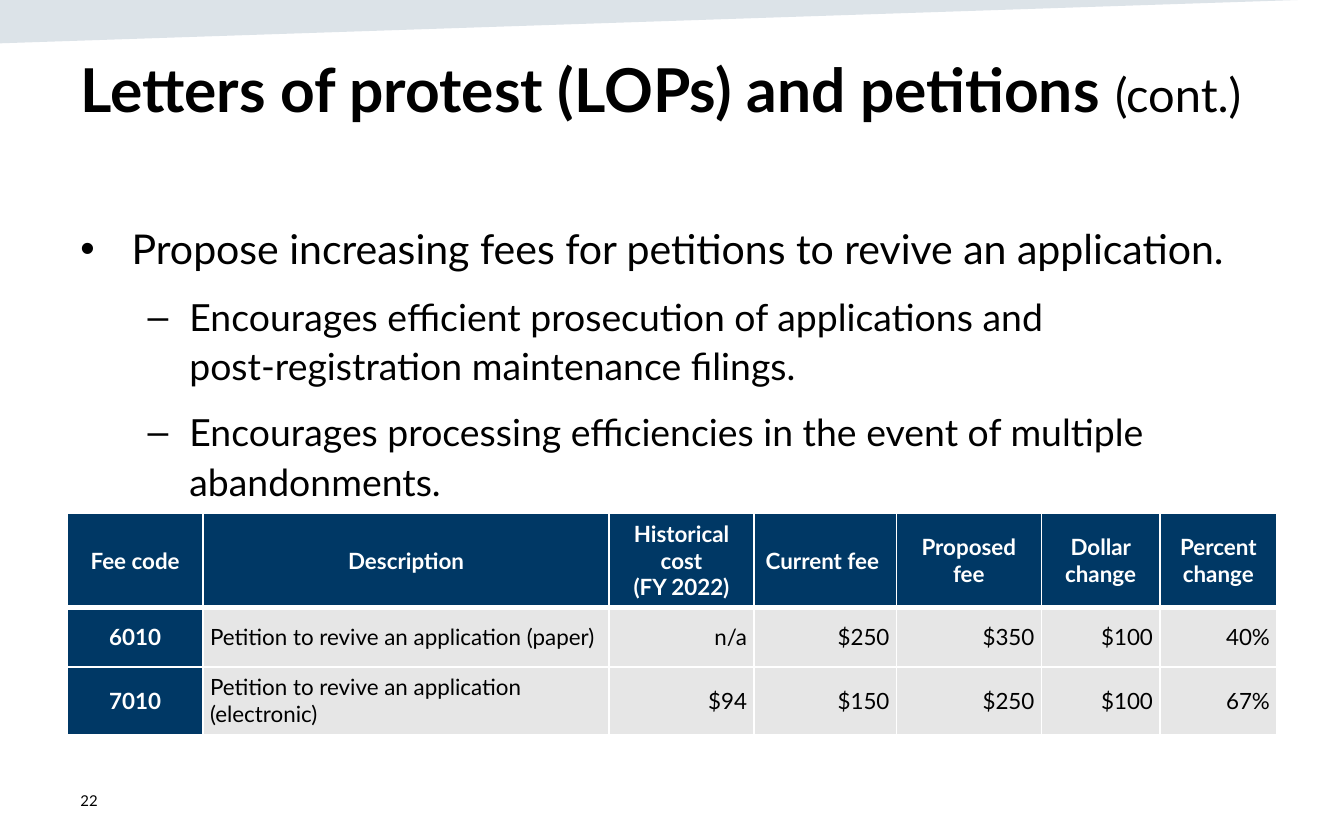
"""Builds the slide on petition fees: title, bullet points and fee table."""
from dataclasses import dataclass

from lxml import etree
from pptx import Presentation
from pptx.dml.color import RGBColor
from pptx.enum.text import MSO_ANCHOR, PP_ALIGN
from pptx.oxml.ns import qn
from pptx.util import Cm, Pt

TOP, MIDDLE = MSO_ANCHOR.TOP, MSO_ANCHOR.MIDDLE
LEFT, CENTER, RIGHT = PP_ALIGN.LEFT, PP_ALIGN.CENTER, PP_ALIGN.RIGHT


@dataclass(frozen=True)
class Theme:
    font: str = "Lato"
    ink: str = "000000"
    paper: str = "FFFFFF"
    navy: str = "003865"
    grey: str = "E6E6E6"
    band: str = "164469"
    band_alpha: int = 15000
    title: float = 32.4
    title_note: float = 25.2
    point: float = 22
    subpoint: float = 20
    table: float = 12
    number: float = 8


THEME = Theme()
MARGIN = 1.27
CONTENT_WIDTH = 22.86

POINTS = [
    (0, "Propose increasing fees for petitions to revive an application."),
    (1, "Encourages efficient prosecution of applications and \npost-registration maintenance filings."),
    (1, "Encourages processing efficiencies in the event of multiple abandonments."),
]
POINT_STYLES = [
    dict(size=THEME.point, bullet="•", indent=0.97, hanging=0.97),
    dict(size=THEME.subpoint, bullet="–", indent=2.06, hanging=0.79),
]

COLUMN_WIDTHS = [2.57, 7.67, 2.74, 2.69, 2.74, 2.24, 2.21]
ROW_HEIGHTS = [1.75, 1.12, 1.24]
FEES = [
    ["Fee code", "Description", "Historical cost\n(FY 2022)", "Current fee ",
     "Proposed fee", "Dollar change", "Percent change"],
    ["6010", "Petition to revive an application (paper)", "n/a", "$250", "$350", "$100", "40%"],
    ["7010", "Petition to revive an application (electronic)", "$94", "$150", "$250", "$100", "67%"],
]


def write(paragraph, text, *, size, color=THEME.ink, bold=False, align=LEFT,
          line=None, before=0, after=0):
    """Append text to a paragraph, with line breaks at each newline."""
    paragraph.alignment = align
    paragraph.line_spacing = line
    paragraph.space_before, paragraph.space_after = Pt(before), Pt(after)
    for index, part in enumerate(text.split("\n")):
        if index:
            paragraph.add_line_break()
        run = paragraph.add_run()
        run.text = part
        run.font.name, run.font.size, run.font.bold = THEME.font, Pt(size), bold
        run.font.color.rgb = RGBColor.from_string(color)


def next_paragraph(frame, index):
    """Return the frame's first paragraph, or a new one after it."""
    return frame.add_paragraph() if index else frame.paragraphs[0]


def add_text_frame(slide, left, top, width, height, anchor=TOP):
    """Add a wrapping text box and return its frame."""
    frame = slide.shapes.add_textbox(Cm(left), Cm(top), Cm(width), Cm(height)).text_frame
    frame.word_wrap = True
    frame.vertical_anchor = anchor
    return frame


def set_bullet(paragraph, bullet, indent, hanging):
    """Give a paragraph a bullet character and a hanging indent."""
    properties = paragraph._p.get_or_add_pPr()
    properties.set("marL", str(Cm(indent)))
    properties.set("indent", str(-Cm(hanging)))
    etree.SubElement(properties, qn("a:buFont"), typeface="Arial")
    etree.SubElement(properties, qn("a:buChar"), char=bullet)


def set_borders(cell, color, **widths):
    """Draw the cell's borders, with widths in points by side."""
    properties = cell._tc.get_or_add_tcPr()
    for position, side in enumerate("LRTB"):
        border = etree.Element(qn(f"a:ln{side}"), w=str(Pt(widths.get(side, 1))))
        fill = etree.SubElement(border, qn("a:solidFill"))
        etree.SubElement(fill, qn("a:srgbClr"), val=color)
        properties.insert(position, border)


def add_band(slide):
    """Add the translucent wedge along the top edge."""
    builder = slide.shapes.build_freeform(Cm(0), Cm(0))
    builder.add_line_segments([(Cm(0), Cm(0.82)), (Cm(25.45), Cm(-0.03))], close=True)
    band = builder.convert_to_shape()
    band.shadow.inherit = False
    band.line.fill.background()
    band.fill.solid()
    band.fill.fore_color.rgb = RGBColor.from_string(THEME.band)
    color = band._element.spPr.find(f"{qn('a:solidFill')}/{qn('a:srgbClr')}")
    etree.SubElement(color, qn("a:alpha"), val=str(THEME.band_alpha))


def add_title(slide):
    """Add the bold title and its lighter note."""
    title = add_text_frame(slide, MARGIN, 0.86, CONTENT_WIDTH, 2.41).paragraphs[0]
    write(title, "Letters of protest (LOPs) and petitions ", size=THEME.title, bold=True)
    write(title, "(cont.)", size=THEME.title_note)


def add_points(slide):
    """Add the two-level bullet list."""
    frame = add_text_frame(slide, MARGIN, 4.01, CONTENT_WIDTH, 10.52)
    for index, (level, text) in enumerate(POINTS):
        style = dict(POINT_STYLES[level])
        point = next_paragraph(frame, index)
        point.level = level
        write(point, text, size=style.pop("size"), line=1.1, before=9)
        set_bullet(point, **style)


def fill_cell(cell, text, row, column):
    """Format one fee cell by its place in the table."""
    header = row == 0
    strong = header or column == 0
    align = CENTER if strong else LEFT if column == 1 else RIGHT
    cell.fill.solid()
    cell.fill.fore_color.rgb = RGBColor.from_string(THEME.navy if strong else THEME.grey)
    cell.vertical_anchor = MIDDLE
    cell.margin_left = cell.margin_right = cell.margin_top = cell.margin_bottom = Cm(0.13)
    set_borders(cell, THEME.paper, T=3 if row == 1 else 1, B=3 if header else 1)
    spacing = 0 if header else 6
    for index, line in enumerate(text.split("\n")):
        write(next_paragraph(cell.text_frame, index), line, size=THEME.table,
              color=THEME.paper if strong else THEME.ink, bold=strong,
              align=align, before=spacing, after=spacing)


def add_fee_table(slide):
    """Add the table of current and proposed fees."""
    fees = slide.shapes.add_table(
        len(FEES), len(COLUMN_WIDTHS), Cm(MARGIN), Cm(9.7),
        Cm(CONTENT_WIDTH), Cm(sum(ROW_HEIGHTS))).table
    for column, width in zip(fees.columns, COLUMN_WIDTHS):
        column.width = Cm(width)
    for row, height in zip(fees.rows, ROW_HEIGHTS):
        row.height = Cm(height)
    for row, texts in enumerate(FEES):
        for column, text in enumerate(texts):
            fill_cell(fees.cell(row, column), text, row, column)


def add_page_number(slide):
    """Add the page number at the lower left."""
    frame = add_text_frame(slide, MARGIN, 14.71, 5.72, 0.84, anchor=MIDDLE)
    write(frame.paragraphs[0], "22", size=THEME.number)


def main():
    """Build and save the presentation."""
    deck = Presentation()
    deck.slide_width, deck.slide_height = Cm(25.4), Cm(15.88)
    slide = deck.slides.add_slide(deck.slide_layouts[6])
    add_band(slide)
    add_title(slide)
    add_points(slide)
    add_fee_table(slide)
    add_page_number(slide)
    deck.save("out.pptx")


if __name__ == "__main__":
    main()
